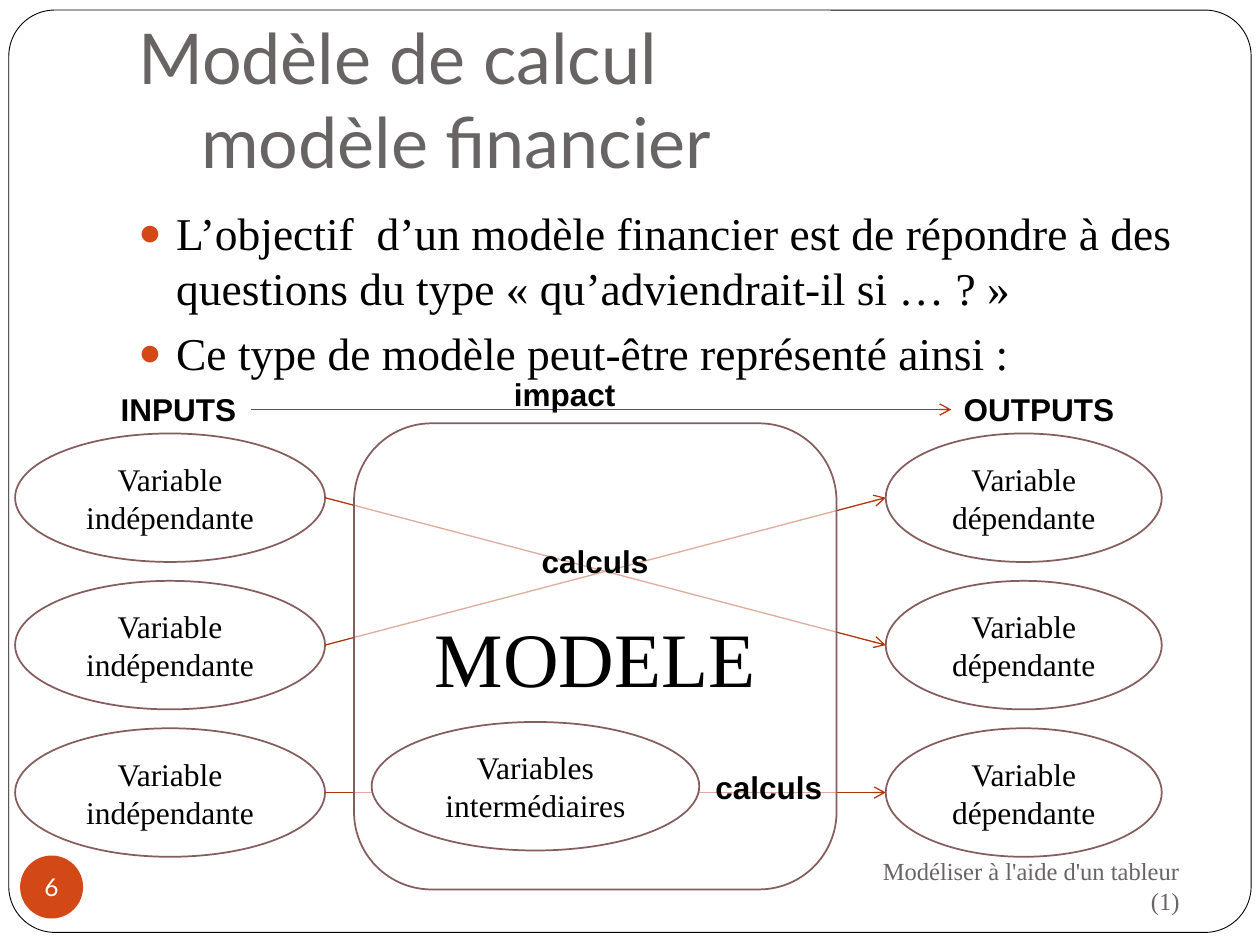
"""Build a slide showing how a financial model links inputs to outputs."""
from lxml import etree
from pptx import Presentation
from pptx import util as u
from pptx.dml.color import RGBColor
from pptx.enum import shapes, text
from pptx.oxml import ns

Inches, Pt = u.Inches, u.Pt
BLACK = RGBColor(0x00, 0x00, 0x00)
WHITE = RGBColor(0xFF, 0xFF, 0xFF)
GREY = RGBColor(0x69, 0x64, 0x64)
ORANGE = RGBColor(0xD3, 0x48, 0x17)
BROWN = RGBColor(0x85, 0x5D, 0x5D)
RUST = RGBColor(0xB1, 0x36, 0x0B)
SERIF, SANS, LABEL = "Times New Roman", "Lato", "Arial"
OVAL = shapes.MSO_SHAPE.OVAL
ROUNDED = shapes.MSO_SHAPE.ROUNDED_RECTANGLE
LEFT, CENTER, RIGHT = text.PP_ALIGN.LEFT, text.PP_ALIGN.CENTER, text.PP_ALIGN.RIGHT
TOP, MIDDLE, BOTTOM = text.MSO_ANCHOR.TOP, text.MSO_ANCHOR.MIDDLE, text.MSO_ANCHOR.BOTTOM

TITLE = ["Modèle de calcul", "\tmodèle financier"]
BULLETS = [
    "L’objectif  d’un modèle financier est de répondre à des questions du type "
    "«\u00a0qu’adviendrait-il si … ?\u00a0»",
    "Ce type de modèle peut-être représenté ainsi :",
]
FOOTER = "Modéliser à l'aide d'un tableur (1)"
PAGE_NUMBER = "6"
COLUMNS = [("Variable indépendante", 0.12, 2.46), ("Variable dépendante", 7.03, 2.19)]
ROW_TOP, ROW_STEP, OVAL_HEIGHT = 3.44, 1.17, 1.02
ROW_LINKS = [(0, 1), (1, 0), (2, 2)]
HEADINGS = [("INPUTS", 0.86, 3.05, 1.13), ("OUTPUTS", 7.55, 3.05, 1.41)]
LABELS = [("impact", 3.98, 2.93, 1.02), ("calculs", 4.2, 4.25, 1.06), ("calculs", 5.58, 6.05, 1.06)]


def add_run(paragraph, words, size, font, color, bold=False):
    run = paragraph.add_run()
    run.text = words
    run.font.size, run.font.name, run.font.bold = Pt(size), font, bold
    run.font.color.rgb = color


def add_shape(slide, kind, box, fill, line=None, width=1):
    shape = slide.shapes.add_shape(kind, *map(Inches, box))
    shape.shadow.inherit = False
    shape.fill.solid()
    shape.fill.fore_color.rgb = fill
    if line is None:
        shape.line.fill.background()
    else:
        shape.line.color.rgb, shape.line.width = line, Pt(width)
    return shape


def write(shape, words, size, font, color=BLACK, align=CENTER, anchor=MIDDLE, wrap=True, bold=False):
    frame = shape.text_frame
    frame.word_wrap, frame.vertical_anchor = wrap, anchor
    paragraph = frame.paragraphs[0]
    paragraph.alignment = align
    add_run(paragraph, words, size, font, color, bold)


def add_text_box(slide, box, anchor=TOP):
    shape = slide.shapes.add_textbox(*map(Inches, box))
    shape.text_frame.word_wrap = True
    shape.text_frame.vertical_anchor = anchor
    return shape


def add_label(slide, words, left, top, width):
    shape = add_text_box(slide, (left, top, width, 0.4))
    write(shape, words, 18, LABEL, align=LEFT, anchor=TOP, wrap=False, bold=True)
    shape.text_frame.auto_size = text.MSO_AUTO_SIZE.SHAPE_TO_FIT_TEXT


def add_variable(slide, words, left, top, width):
    shape = add_shape(slide, OVAL, (left, top, width, OVAL_HEIGHT), WHITE, BROWN)
    write(shape, words, 18, SERIF)


def add_arrow(slide, start, end):
    arrow = slide.shapes.add_connector(shapes.MSO_CONNECTOR.STRAIGHT, *map(Inches, start + end))
    arrow.line.color.rgb, arrow.line.width = RUST, Pt(0.75)
    etree.SubElement(arrow.line._get_or_add_ln(), ns.qn("a:tailEnd"), type="arrow")
    etree.SubElement(arrow._element.spPr, ns.qn("a:effectLst"))


def add_bullet(paragraph):
    properties = paragraph._p.get_or_add_pPr()
    properties.set("marL", str(Inches(0.3)))
    properties.set("indent", str(-Inches(0.3)))
    color = etree.SubElement(properties, ns.qn("a:buClr"))
    etree.SubElement(color, ns.qn("a:srgbClr"), val=str(ORANGE))
    etree.SubElement(properties, ns.qn("a:buSzPct"), val="85000")
    etree.SubElement(properties, ns.qn("a:buFont"), typeface=LABEL)
    etree.SubElement(properties, ns.qn("a:buChar"), char="●")


def add_headers(slide):
    frame = add_shape(slide, ROUNDED, (0.07, 0.08, 9.86, 7.32), WHITE, BLACK, 0.5)
    frame.adjustments[0] = 0.05

    title = add_text_box(slide, (1, 0.3, 8.5, 1.25), BOTTOM).text_frame
    title.margin_bottom = Inches(0.1)
    paragraph = title.paragraphs[0]
    for index, line in enumerate(TITLE):
        if index:
            paragraph.add_line_break()
        add_run(paragraph, line, 40, SANS, GREY)

    body = add_text_box(slide, (1, 1.58, 8.5, 5)).text_frame
    for index, words in enumerate(BULLETS):
        paragraph = body.add_paragraph() if index else body.paragraphs[0]
        paragraph.space_before = Pt(5.8)
        add_bullet(paragraph)
        add_run(paragraph, words, 26, SERIF, BLACK)

    footer = add_text_box(slide, (6.75, 6.77, 2.71, 0.52))
    write(footer, FOOTER, 14, SERIF, GREY, RIGHT)
    badge = add_shape(slide, OVAL, (0.16, 6.79, 0.5, 0.5), ORANGE)
    margins = badge.text_frame
    margins.margin_left = margins.margin_right = margins.margin_top = margins.margin_bottom = 0
    write(badge, PAGE_NUMBER, 14, SANS, WHITE, wrap=False)


def add_diagram(slide):
    tops = [ROW_TOP + ROW_STEP * row for row in range(len(ROW_LINKS))]
    for words, left, width in COLUMNS:
        for top in tops:
            add_variable(slide, words, left, top, width)

    (_, input_left, input_width), (_, output_left, _) = COLUMNS
    middles = [top + OVAL_HEIGHT / 2 for top in tops]
    for source, target in ROW_LINKS:
        add_arrow(slide, (input_left + input_width, middles[source]), (output_left, middles[target]))

    model = add_shape(slide, ROUNDED, (2.81, 3.36, 3.83, 3.7), WHITE, BROWN)
    fill_color = model._element.spPr.find(ns.qn("a:solidFill"))[0]
    etree.SubElement(fill_color, ns.qn("a:alpha"), val="59000")
    write(model, "MODELE", 44, SERIF)
    add_variable(slide, "Variables intermédiaires", 2.95, 5.73, 2.6)

    for heading in HEADINGS:
        add_label(slide, *heading)
    add_arrow(slide, (1.99, 3.25), (7.55, 3.25))
    for label in LABELS:
        add_label(slide, *label)


def main():
    presentation = Presentation()
    presentation.slide_width, presentation.slide_height = Inches(10), Inches(7.5)
    slide = presentation.slides.add_slide(presentation.slide_layouts[6])
    add_headers(slide)
    add_diagram(slide)
    presentation.save("out.pptx")


if __name__ == "__main__":
    main()
